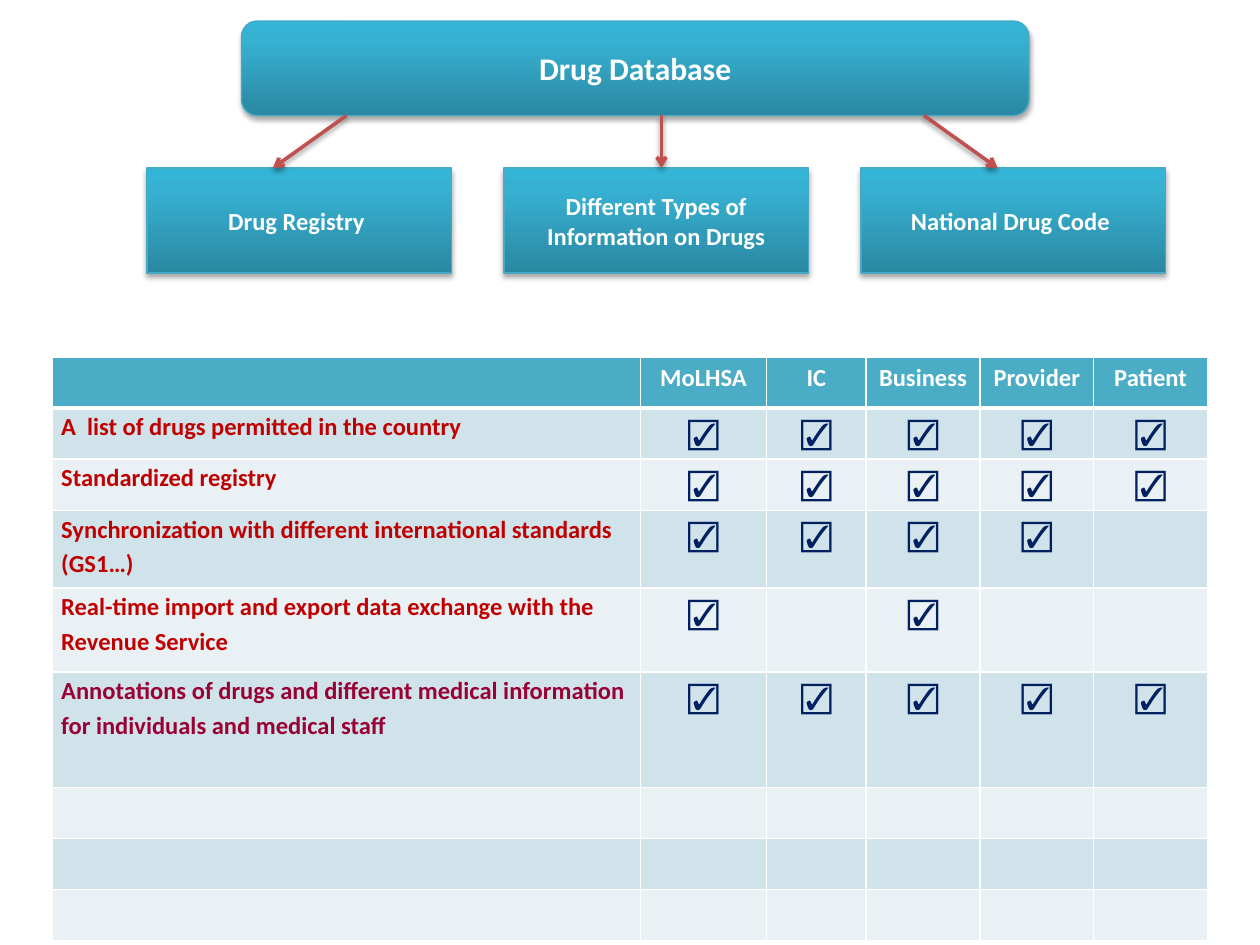
import copy
import pptx
import pptx.util
import pptx.dml.color
import pptx.enum.shapes
import pptx.enum.text
import pptx.oxml
import pptx.oxml.ns

Pt = pptx.util.Pt
qn = pptx.oxml.ns.qn
Shape = pptx.enum.shapes.MSO_SHAPE
Align = pptx.enum.text.PP_ALIGN
Anchor = pptx.enum.text.MSO_ANCHOR
SPACE = pptx.oxml.ns.nsdecls("a")


def color(text):
    return pptx.dml.color.RGBColor.from_string(text)


class Board:
    font = "Calibri"
    white = "FFFFFF"
    grade = [(0, "2A88A2"), (0.8, "37B1D2"), (1, "34B4D6")]
    edge = "46AAC5"
    arm = "C0504D"
    head = "4BACC6"
    bands = ["D0E3EA", "E9F1F5"]
    mark = "002060"

    def __init__(self, slide):
        self.slide = slide

    def words(self, para, text, size, tint, bold=True, align=Align.CENTER):
        para.alignment = align
        run = para.add_run()
        run.text = text
        run.font.name = self.font
        run.font.size = Pt(size)
        run.font.bold = bold
        run.font.color.rgb = color(tint)

    def shade(self, item, alpha, drop):
        item._element.spPr.append(pptx.oxml.parse_xml(
            f'<a:effectLst {SPACE}><a:outerShdw blurRad="{Pt(3.1)}" dist="{Pt(drop)}" '
            f'dir="5400000" rotWithShape="0"><a:srgbClr val="000000">'
            f'<a:alpha val="{alpha * 1000}"/></a:srgbClr></a:outerShdw></a:effectLst>'))

    def box(self, kind, left, top, width, height, text, size):
        item = self.slide.shapes.add_shape(kind, Pt(left), Pt(top), Pt(width), Pt(height))
        item.fill.gradient()
        item.fill.gradient_angle = 90
        # The default gradient has two stops; a third is needed
        stops = item._element.spPr.find(".//" + qn("a:gsLst"))
        stops.append(copy.deepcopy(stops[-1]))
        for stop, (place, tint) in zip(item.fill.gradient_stops, self.grade):
            stop.position = place
            stop.color.rgb = color(tint)
        item.line.color.rgb = color(self.edge)
        item.line.width = Pt(0.75)
        self.shade(item, 35, 1.8)
        frame = item.text_frame
        frame.word_wrap = True
        frame.vertical_anchor = Anchor.MIDDLE
        self.words(frame.paragraphs[0], text, size, self.white)

    def arrow(self, x1, y1, x2, y2):
        item = self.slide.shapes.add_connector(
            pptx.enum.shapes.MSO_CONNECTOR.STRAIGHT, Pt(x1), Pt(y1), Pt(x2), Pt(y2))
        item.line.color.rgb = color(self.arm)
        item.line.width = Pt(2)
        item._element.spPr.find(qn("a:ln")).append(
            pptx.oxml.parse_xml(f'<a:tailEnd {SPACE} type="arrow"/>'))
        self.shade(item, 38, 1.6)

    def paint(self, cell, fill, top=1, bottom=1):
        # Borders come before the fill in the cell properties
        props = cell._tc.get_or_add_tcPr()
        for side, width in zip("LRTB", (1, 1, top, bottom)):
            props.append(pptx.oxml.parse_xml(
                f'<a:ln{side} {SPACE} w="{Pt(width)}"><a:solidFill>'
                f'<a:srgbClr val="{self.white}"/></a:solidFill></a:ln{side}>'))
        cell.fill.solid()
        cell.fill.fore_color.rgb = color(fill)

    def label(self, cell, text, tint):
        cell.margin_left = cell.margin_right = Pt(5)
        cell.margin_top = cell.margin_bottom = 0
        para = cell.text_frame.paragraphs[0]
        para.line_spacing = 1.15
        para.space_before = Pt(12)
        self.words(para, text, 14, tint, align=Align.LEFT)

    def table(self, left, top, wides, highs, heads, rows):
        grid = self.slide.shapes.add_table(
            len(highs), len(wides), Pt(left), Pt(top), Pt(sum(wides)), Pt(sum(highs))).table
        for col, wide in zip(grid.columns, wides):
            col.width = Pt(wide)
        for row, high in zip(grid.rows, highs):
            row.height = Pt(high)
        # Borders and bands
        for r in range(len(highs)):
            fill = self.bands[(r - 1) % 2] if r else self.head
            for c in range(len(wides)):
                self.paint(grid.cell(r, c), fill, 3 if r == 1 else 1, 1 if r else 3)
        # Header words
        for c, text in enumerate(heads, 1):
            self.words(grid.cell(0, c).text_frame.paragraphs[0], text, 14, self.white)
        # Features and the parties that get them
        for r, (text, tint, users) in enumerate(rows, 1):
            self.label(grid.cell(r, 0), text, tint)
            for c, name in enumerate(heads, 1):
                if name in users:
                    self.words(grid.cell(r, c).text_frame.paragraphs[0],
                               "☑", 18, self.mark, bold=False)


def main():
    deck = pptx.Presentation()
    deck.slide_width, deck.slide_height = Pt(720), Pt(540)
    board = Board(deck.slides.add_slide(deck.slide_layouts[6]))

    # Table of features by user
    heads = ["MoLHSA", "IC", "Business", "Provider", "Patient"]
    red, plum = "C00000", "990033"
    rows = [
        ("A  list of drugs permitted in the country", red, heads),
        ("Standardized registry", red, heads),
        ("Synchronization with different international standards (GS1…)", red, heads[:4]),
        ("Real-time import and export data exchange with the Revenue Service", red,
         ["MoLHSA", "Business"]),
        ("Annotations of drugs and different medical information "
         "for individuals and medical staff", plum, heads),
    ]
    low = 29.2
    board.table(30, 204, [336, 72, 57] + [65] * 3,
                [low] * 3 + [44.4, 48, 66] + [low] * 3, heads, rows)

    # Database and its three parts
    board.box(Shape.ROUNDED_RECTANGLE, 138, 12, 450, 54, "Drug Database", 18)
    parts = ["Drug Registry ", "Different Types of Information on Drugs", "National Drug Code "]
    for i, text in enumerate(parts):
        board.box(Shape.RECTANGLE, 84 + 204 * i, 96, 174, 60, text, 14)

    # Arrows from the database to its parts
    for start, end in [(198, 156), (528, 570), (378, 378)]:
        board.arrow(start, 66, end, 96)

    deck.save("out.pptx")


if __name__ == "__main__":
    main()
